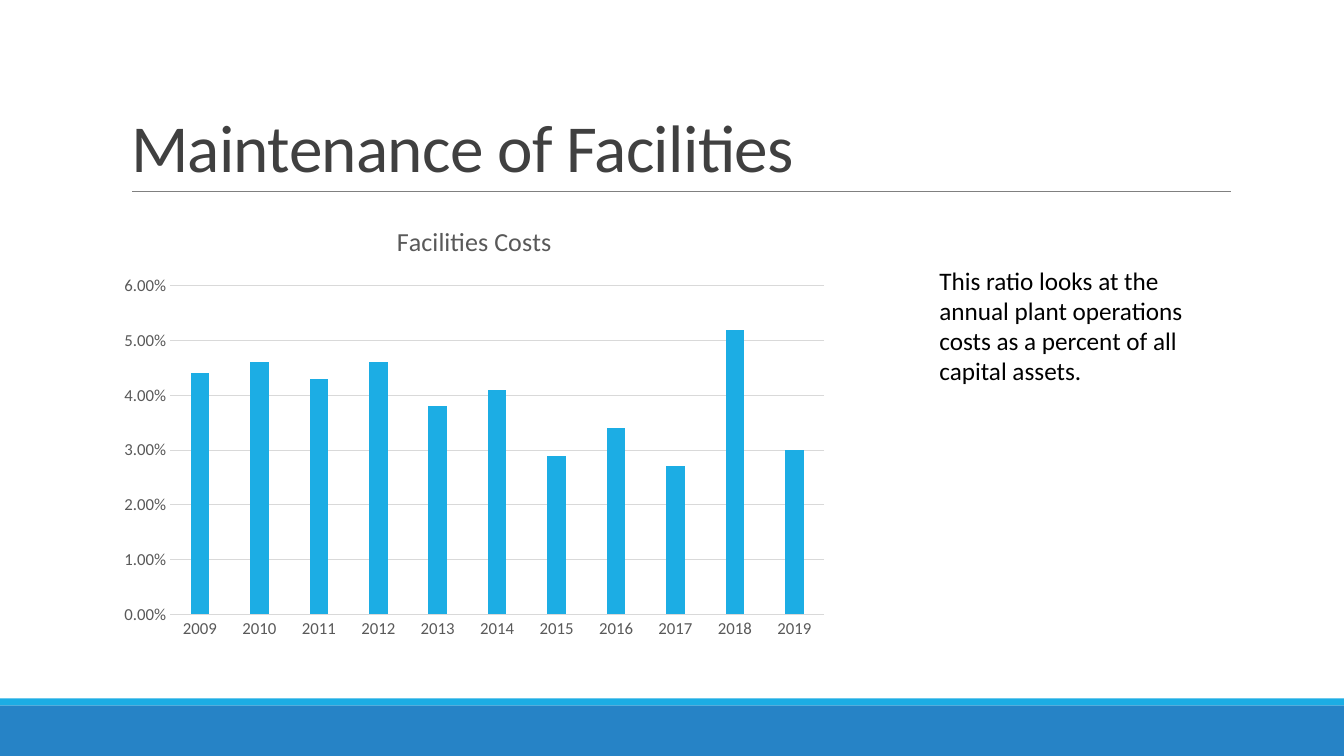
import dataclasses

import lxml.etree
import pptx
import pptx.chart.data
import pptx.dml.color
import pptx.enum.chart
import pptx.enum.shapes
import pptx.enum.text
import pptx.oxml.ns
import pptx.util

COLUMNS, ROWS, CELL = 133.33, 75, pptx.util.Inches(0.1)
COSTS = {
    "2009": 0.044, "2010": 0.046, "2011": 0.043, "2012": 0.046,
    "2013": 0.038, "2014": 0.041, "2015": 0.029, "2016": 0.034,
    "2017": 0.027, "2018": 0.052, "2019": 0.03,
}


@dataclasses.dataclass(frozen=True)
class Theme:
    """Colours, font and type sizes of the deck."""

    face: str = "Calibri"
    band: str = "2683C6"
    accent: str = "1CADE4"
    rule: str = "808080"
    grid: str = "D9D9D9"
    heading: str = "404040"
    label: str = "595959"
    body: str = "000000"
    heading_size: float = 48
    chart_title_size: float = 18.6
    body_size: float = 18
    label_size: float = 12


THEME = Theme()


@dataclasses.dataclass(frozen=True)
class Box:
    """A region measured in grid columns and rows."""

    left: float
    top: float
    width: float
    height: float

    def frame(self):
        """Return left, top, width and height as slide lengths."""
        return [round(cells * CELL) for cells in dataclasses.astuple(self)]


def rgb(code):
    """Turn a hex code into a colour."""
    return pptx.dml.color.RGBColor.from_string(code)


def style_font(font, size, color):
    """Apply the theme face with a size and colour."""
    font.name = THEME.face
    font.size = pptx.util.Pt(size)
    font.bold = False
    font.color.rgb = rgb(color)


def style_line(line, color, width):
    """Set the colour and width of a line."""
    line.color.rgb = rgb(color)
    line.width = pptx.util.Pt(width)


def add_band(page, box, color):
    """Draw a plain filled strip."""
    strip = page.shapes.add_shape(pptx.enum.shapes.MSO_SHAPE.RECTANGLE, *box.frame())
    strip.shadow.inherit = False
    strip.fill.solid()
    strip.fill.fore_color.rgb = rgb(color)
    strip.line.fill.background()


def add_footer(page, box):
    """Draw the footer band with its thin accent strip on top."""
    strip = 0.12 * box.height
    add_band(page, Box(box.left, box.top + strip, box.width, box.height - strip), THEME.band)
    add_band(page, Box(box.left, box.top, box.width, strip), THEME.accent)


def add_heading(page, box, text):
    """Place the title and the rule along its lower edge."""
    title = page.shapes.title
    title.left, title.top, title.width, title.height = box.frame()
    frame = title.text_frame
    frame.text = text
    frame.word_wrap = True
    frame.auto_size = pptx.enum.text.MSO_AUTO_SIZE.NONE
    frame.vertical_anchor = pptx.enum.text.MSO_ANCHOR.BOTTOM
    para = frame.paragraphs[0]
    para.alignment = pptx.enum.text.PP_ALIGN.LEFT
    para.line_spacing = 0.85
    style_font(para.font, THEME.heading_size, THEME.heading)
    para.runs[0].font._element.set("spc", "-50")

    left, top, width, height = Box(box.left + 1.1, box.top, box.width - 1, box.height).frame()
    rule = page.shapes.add_connector(
        pptx.enum.shapes.MSO_CONNECTOR.STRAIGHT, left, top + height, left + width, top + height
    )
    style_line(rule.line, THEME.rule, 0.5)
    lxml.etree.SubElement(rule._element.spPr, pptx.oxml.ns.qn("a:effectLst"))


def style_axis(axis):
    """Give an axis its label font and remove its tick marks."""
    style_font(axis.tick_labels.font, THEME.label_size, THEME.label)
    axis.major_tick_mark = axis.minor_tick_mark = pptx.enum.chart.XL_TICK_MARK.NONE


def add_cost_chart(page, box, title, costs):
    """Place the column chart of yearly cost ratios."""
    data = pptx.chart.data.CategoryChartData(number_format="0.00%")
    data.categories = list(costs)
    data.add_series("Series 1", list(costs.values()))
    kind = pptx.enum.chart.XL_CHART_TYPE.COLUMN_CLUSTERED
    chart = page.shapes.add_chart(kind, *box.frame(), data).chart
    style_font(chart.font, THEME.label_size, THEME.label)
    chart.has_legend = False
    chart.has_title = True
    heading = chart.chart_title.text_frame
    heading.text = title
    style_font(heading.paragraphs[0].font, THEME.chart_title_size, THEME.label)

    plot = chart.plots[0]
    plot.vary_by_categories = False
    plot.gap_width, plot.overlap = 219, -27
    columns = plot.series[0].format.fill
    columns.solid()
    columns.fore_color.rgb = rgb(THEME.accent)

    years, ratios = chart.category_axis, chart.value_axis
    style_axis(years)
    style_line(years.format.line, THEME.grid, 0.75)
    style_axis(ratios)
    ratios.format.line.fill.background()
    ratios.minimum_scale, ratios.maximum_scale, ratios.major_unit = 0, 0.06, 0.01
    ratios.tick_labels.number_format = "0.00%"
    ratios.tick_labels.number_format_is_linked = False
    style_line(ratios.major_gridlines.format.line, THEME.grid, 0.75)


def add_note(page, box, text):
    """Place the explanatory paragraph."""
    frame = page.shapes.add_textbox(*box.frame()).text_frame
    frame.word_wrap = True
    frame.text = text
    style_font(frame.paragraphs[0].font, THEME.body_size, THEME.body)


def build_ratio_page(deck):
    """Add the slide that shows a ratio beside its explanation."""
    page = deck.slides.add_slide(deck.slide_layouts.get_by_name("Title Only"))
    add_footer(page, Box(0, 69.3, COLUMNS, 5.7))
    add_heading(page, Box(12, 3.1, 110, 15.9), "Maintenance of Facilities")
    add_cost_chart(page, Box(10.9, 20.3, 72.3, 43.9), "Facilities Costs", COSTS)
    add_note(
        page,
        Box(92.2, 25.8, 29.8, 13.1),
        "This ratio looks at the annual plant operations costs as a percent of all capital assets.",
    )


def main():
    """Build and save the deck."""
    deck = pptx.Presentation()
    deck.slide_width, deck.slide_height = round(COLUMNS * CELL), ROWS * CELL
    build_ratio_page(deck)
    deck.save("out.pptx")


if __name__ == "__main__":
    main()
